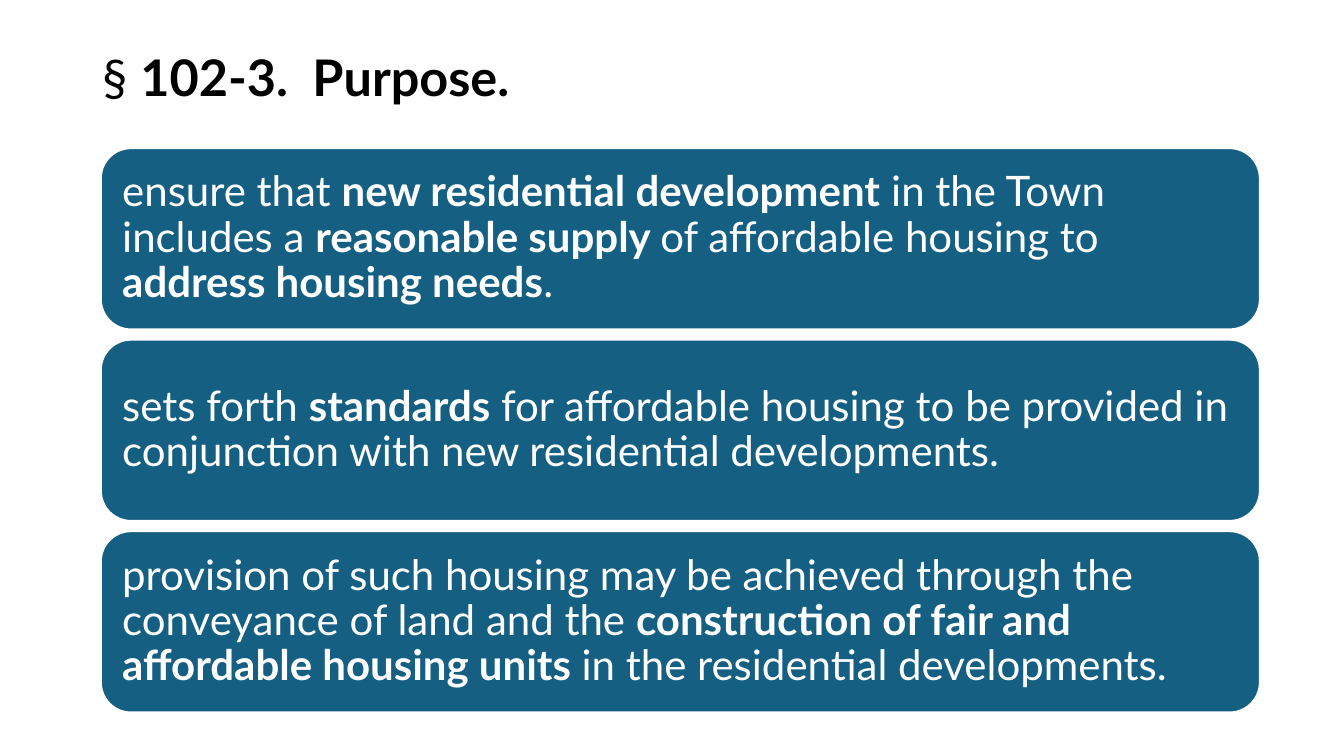
"""Build the Purpose slide: a section title above three rounded statement panels."""
from pptx import Presentation
from pptx.dml.color import RGBColor
from pptx.enum.shapes import MSO_SHAPE
from pptx.enum.text import MSO_ANCHOR, MSO_AUTO_SIZE, PP_ALIGN
from pptx.util import Pt

ROUNDED = MSO_SHAPE.ROUNDED_RECTANGLE
MIDDLE = MSO_ANCHOR.MIDDLE
NO_AUTOFIT = MSO_AUTO_SIZE.NONE
LEFT = PP_ALIGN.LEFT

TITLE_ONLY = 5
PANEL_LEFT, PANEL_TOP = 72, 105.8
PANEL_WIDTH, PANEL_HEIGHT, PANEL_STEP = 828, 129.6, 136.8
INSET = 9

HEADING = [("§ ", False), ("102-3.  Purpose.", True)]
STATEMENTS = [
    [
        ("ensure that ", False),
        ("new residential development", True),
        (" in the Town includes a ", False),
        ("reasonable supply ", True),
        ("of affordable housing to ", False),
        ("address housing needs", True),
        (".", False),
    ],
    [
        ("sets forth ", False),
        ("standards", True),
        (" for affordable housing to be provided in conjunction with "
         "new residential developments.", False),
    ],
    [
        ("provision of such housing may be achieved through the "
         "conveyance of land and the ", False),
        ("construction of fair and affordable housing units ", True),
        ("in the residential developments.", False),
    ],
]


def color(hex_value):
    return RGBColor.from_string(hex_value)


def write_phrases(frame, phrases, size, text_color):
    frame.word_wrap = True
    frame.auto_size = NO_AUTOFIT
    frame.vertical_anchor = MIDDLE
    paragraph = frame.paragraphs[0]
    paragraph.alignment = LEFT
    paragraph.line_spacing = 0.9
    for phrase, bold in phrases:
        run = paragraph.add_run()
        run.text = phrase
        run.font.name = "Lato"
        run.font.size = Pt(size)
        run.font.bold = bold
        run.font.color.rgb = color(text_color)


presentation = Presentation()
presentation.slide_width = Pt(960)
presentation.slide_height = Pt(540)
slide = presentation.slides.add_slide(presentation.slide_layouts[TITLE_ONLY])

heading = slide.shapes.title
heading.left, heading.top = Pt(66), Pt(28.8)
heading.width, heading.height = Pt(828), Pt(57.6)
write_phrases(heading.text_frame, HEADING, 36, "000000")

for row, statement in enumerate(STATEMENTS):
    panel = slide.shapes.add_shape(
        ROUNDED, Pt(PANEL_LEFT), Pt(PANEL_TOP + row * PANEL_STEP),
        Pt(PANEL_WIDTH), Pt(PANEL_HEIGHT))
    panel.shadow.inherit = False
    panel.fill.solid()
    panel.fill.fore_color.rgb = color("156082")
    panel.line.color.rgb = color("FFFFFF")
    panel.line.width = Pt(1.5)
    frame = panel.text_frame
    frame.margin_left = frame.margin_right = Pt(INSET)
    frame.margin_top = frame.margin_bottom = Pt(INSET)
    write_phrases(frame, statement, 30, "FFFFFF")

presentation.save("out.pptx")
